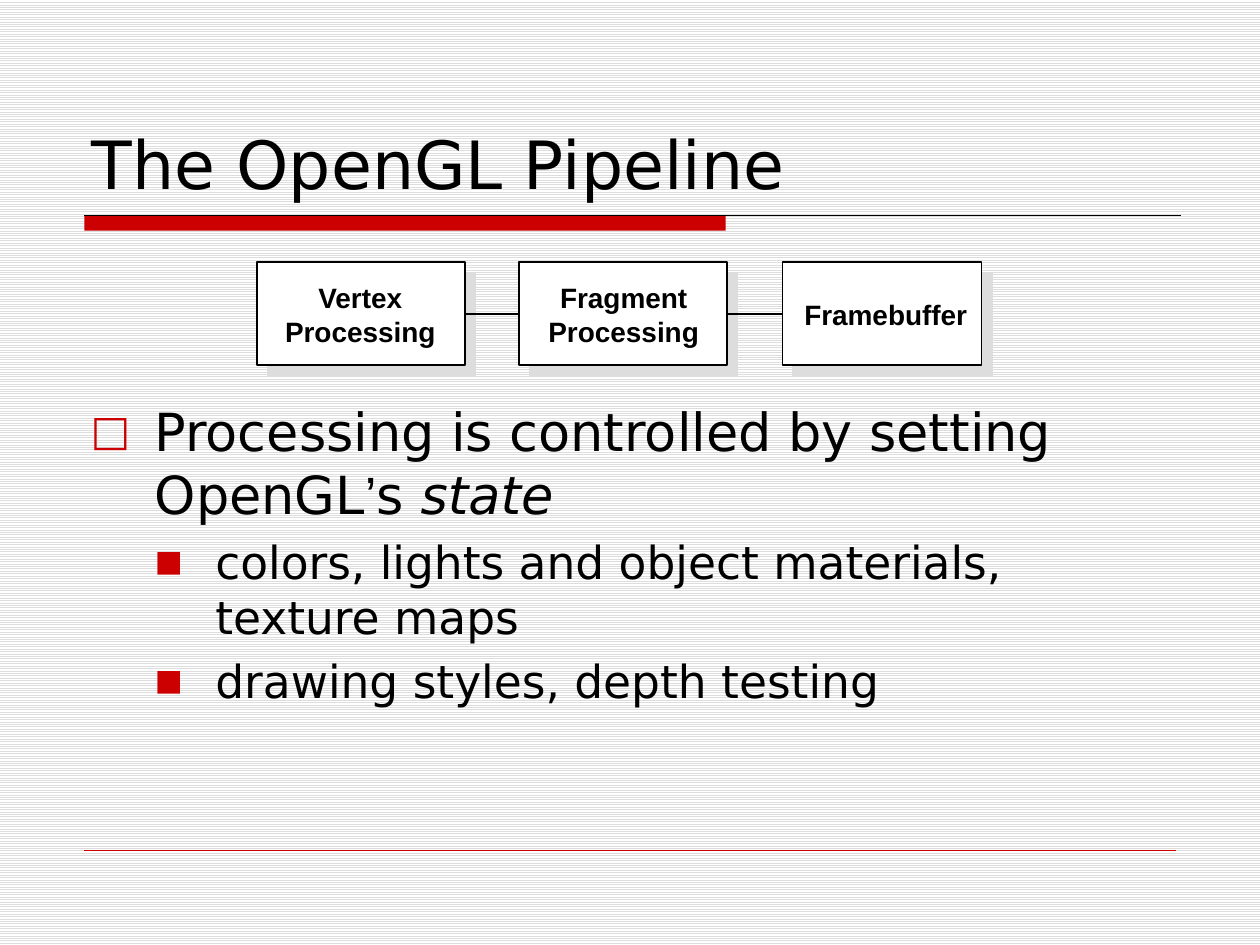
"""Build the slide about the OpenGL pipeline and its state."""
import pptx
import pptx.dml.color
import pptx.enum.dml
import pptx.enum.shapes
import pptx.enum.text
import pptx.oxml
import pptx.oxml.ns
import pptx.util

Inches = pptx.util.Inches
Pt = pptx.util.Pt
RGB = pptx.dml.color.RGBColor.from_string
NAMESPACE = pptx.oxml.ns.nsdecls("a")

THEME = {
    "ink": RGB("000000"),
    "paper": RGB("FFFFFF"),
    "accent": RGB("CC0000"),
    "shade": RGB("DDDDDD"),
    "body_font": "DejaVu Sans",
    "label_font": "Arial",
    "title_size": Pt(38),
    "label_size": Pt(16),
    "level_sizes": [Pt(30), Pt(26)],
}


def add_span(para, text, **formats):
    span = para.add_run()
    span.text = text
    span.font.color.rgb = THEME["ink"]
    for name, value in formats.items():
        setattr(span.font, name, value)


def add_rule(page, left, right, top, color, width):
    rule = page.shapes.add_connector(
        pptx.enum.shapes.MSO_CONNECTOR.STRAIGHT,
        Inches(left), Inches(top), Inches(right), Inches(top))
    rule.line.color.rgb = color
    rule.line.width = Pt(width)
    rule._element.spPr.append(pptx.oxml.parse_xml(f"<a:effectLst {NAMESPACE}/>"))


deck = pptx.Presentation()
deck.slide_width = Inches(10)
deck.slide_height = Inches(7.5)
page = deck.slides.add_slide(deck.slide_layouts[6])
backdrop = page.background.fill
backdrop.patterned()
backdrop.pattern = pptx.enum.dml.MSO_PATTERN.LIGHT_HORIZONTAL
backdrop.fore_color.rgb = THEME["shade"]
backdrop.back_color.rgb = THEME["paper"]

title_bar = page.shapes.add_shape(
    pptx.enum.shapes.MSO_SHAPE.RECTANGLE,
    Inches(0.67), Inches(1.71), Inches(5.09), Inches(0.12))
title_bar.shadow.inherit = False
title_bar.fill.solid()
title_bar.fill.fore_color.rgb = THEME["accent"]
title_bar.line.fill.background()
add_rule(page, 0.67, 9.37, 1.71, THEME["ink"], 0.75)
add_rule(page, 0.67, 9.33, 6.75, THEME["accent"], 0.25)

title = page.shapes.add_textbox(Inches(0.63), Inches(0.33), Inches(8.75), Inches(1.33))
title.text_frame.word_wrap = True
title.text_frame.vertical_anchor = pptx.enum.text.MSO_ANCHOR.BOTTOM
add_span(title.text_frame.paragraphs[0], "The OpenGL Pipeline",
         name=THEME["body_font"], size=THEME["title_size"])

body = page.shapes.add_textbox(Inches(0.62), Inches(3.12), Inches(8.75), Inches(3.46))
body.text_frame.word_wrap = True
sans = {"name": THEME["body_font"]}
points = [
    (0, [("Processing is controlled by setting OpenGL", sans),
         ("’", {"name": THEME["label_font"]}),
         ("s ", sans),
         ("state", {**sans, "italic": True})]),
    (1, [("colors, lights and object materials, texture maps", sans)]),
    (1, [("drawing styles, depth testing", sans)]),
]
bullets = [("□", 80, 0.51, -0.51), ("■", 65, 0.99, -0.48)]
for index, (level, spans) in enumerate(points):
    para = body.text_frame.add_paragraph() if index else body.text_frame.paragraphs[0]
    size = THEME["level_sizes"][level]
    symbol, percent, margin, indent = bullets[level]
    para.level = level
    para.space_before = Pt(size.pt * 0.2)
    properties = para._p.get_or_add_pPr()
    properties.set("marL", str(Inches(margin)))
    properties.set("indent", str(Inches(indent)))
    for markup in (
        f'<a:buClr {NAMESPACE}><a:srgbClr val="{THEME["accent"]}"/></a:buClr>',
        f'<a:buSzPct {NAMESPACE} val="{percent * 1000}"/>',
        f'<a:buFont {NAMESPACE} typeface="{THEME["body_font"]}"/>',
        f'<a:buChar {NAMESPACE} char="{symbol}"/>',
    ):
        properties.append(pptx.oxml.parse_xml(markup))
    for text, formats in spans:
        add_span(para, text, size=size, **formats)

stages = [
    (2.04, 1.65, ["Vertex", "Processing"], (2.16, 2.18, 1.4, 0.64)),
    (4.12, 1.65, ["Fragment", "Processing"], (4.25, 2.18, 1.4, 0.64)),
    (6.21, 1.58, ["Framebuffer"], (6.28, 2.31, 1.5, 0.37)),
]
for left, width, lines, label_place in stages:
    stage = page.shapes.add_shape(
        pptx.enum.shapes.MSO_SHAPE.RECTANGLE,
        Inches(left), Inches(2.08), Inches(width), Inches(0.82))
    stage.fill.solid()
    stage.fill.fore_color.rgb = THEME["paper"]
    stage.line.color.rgb = THEME["ink"]
    stage.line.width = Pt(1)
    stage._element.spPr.append(pptx.oxml.parse_xml(
        f'<a:effectLst {NAMESPACE}><a:outerShdw dist="{Pt(8.5)}" dir="2700000" '
        f'algn="ctr" rotWithShape="0"><a:srgbClr val="{THEME["shade"]}"/>'
        '</a:outerShdw></a:effectLst>'))

    label = page.shapes.add_textbox(*map(Inches, label_place))
    label.text_frame.word_wrap = False
    label.text_frame.auto_size = pptx.enum.text.MSO_AUTO_SIZE.SHAPE_TO_FIT_TEXT
    for index, line in enumerate(lines):
        para = label.text_frame.add_paragraph() if index else label.text_frame.paragraphs[0]
        para.alignment = pptx.enum.text.PP_ALIGN.CENTER
        add_span(para, line, name=THEME["label_font"], size=THEME["label_size"], bold=True)

for (left, width, *_), (following, *_) in zip(stages, stages[1:]):
    add_rule(page, left + width, following, 2.49, THEME["ink"], 1)

deck.save("out.pptx")
